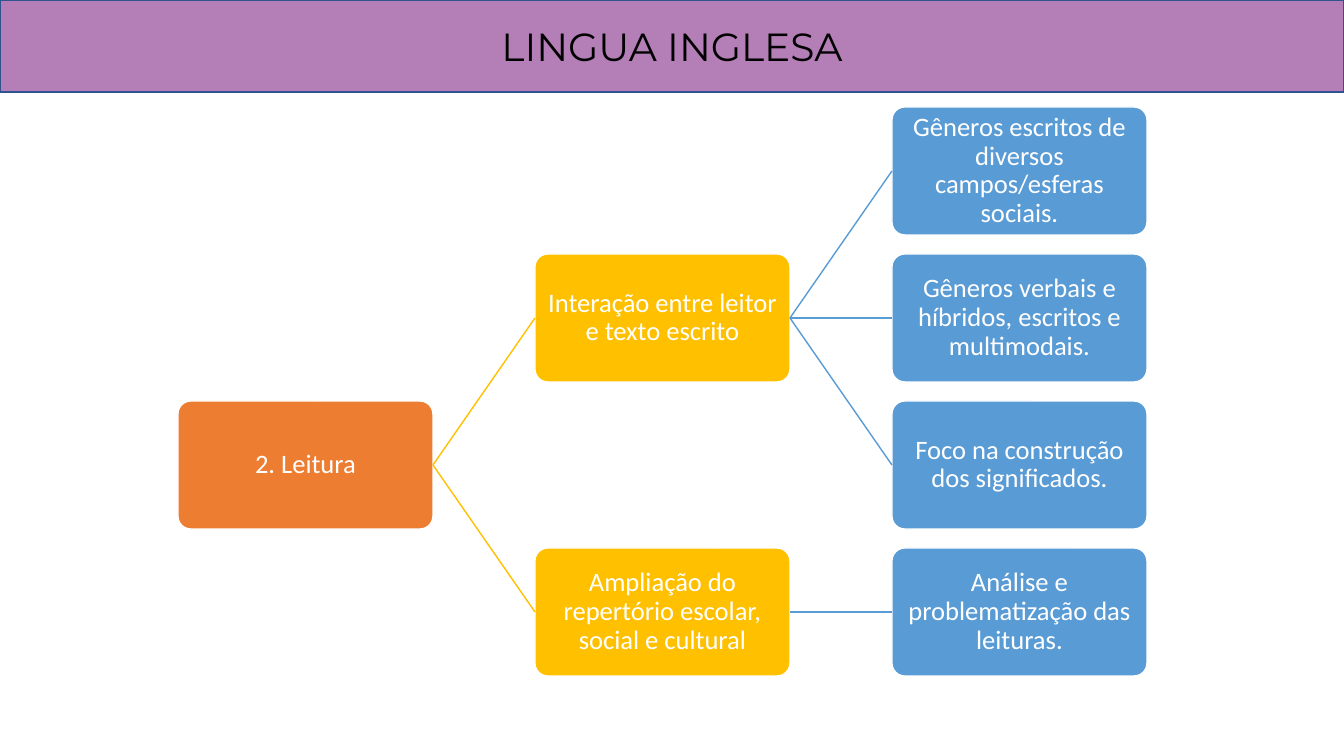
from lxml import etree
from pptx import Presentation
from pptx.dml.color import RGBColor
from pptx.enum.shapes import MSO_CONNECTOR, MSO_SHAPE
from pptx.enum.text import MSO_ANCHOR, MSO_AUTO_SIZE, PP_ALIGN
from pptx.oxml.ns import qn
from pptx.util import Emu, Pt

ROUNDED = MSO_SHAPE.ROUNDED_RECTANGLE
STRAIGHT = MSO_CONNECTOR.STRAIGHT
MIDDLE = MSO_ANCHOR.MIDDLE
CENTER = PP_ALIGN.CENTER
NO_AUTOFIT = MSO_AUTO_SIZE.NONE
LEFT_SIDE, RIGHT_SIDE = 1, 3

SLIDE_WIDTH, SLIDE_HEIGHT = 1344, 756
BANNER_HEIGHT = 92
BOX_WIDTH, BOX_HEIGHT = 255, 128
FIRST_LEFT, COLUMN_STEP = 178, 357
FIRST_TOP, ROW_STEP = 107, 147

# One colour per level of the tree
LEVEL_COLORS = ["ED7D31", "FFC000", "599BD5"]

# Each node: text, row, children
TREE = ("2. Leitura", 2, [
    ("Interação entre leitor e texto escrito", 1, [
        ("Gêneros escritos de diversos campos/esferas sociais.", 0, []),
        ("Gêneros verbais e híbridos, escritos e multimodais.", 1, []),
        ("Foco na construção dos significados.", 2, []),
    ]),
    ("Ampliação do repertório escolar, social e cultural", 3, [
        ("Análise e problematização das leituras.", 3, []),
    ]),
])


def px(length):
    return Emu(round(length * 12192000 / SLIDE_WIDTH))


def color(value):
    return RGBColor.from_string(value)


def apply(target, values):
    for name, value in values.items():
        setattr(target, name, value)


class TreeSlide:
    """Holds the style and the current slide."""

    title_font = {"name": "Montserrat", "size": Pt(28)}
    node_font = {"name": "Calibri", "size": Pt(19)}

    def __init__(self, deck):
        self.slide = deck.slides.add_slide(deck.slide_layouts[5])

    def paint(self, shape, fill, line):
        shape.fill.solid()
        shape.fill.fore_color.rgb = color(fill)
        shape.line.color.rgb = color(line)
        shape.line.width = Pt(1)

    def label(self, shape, text, font, text_color, spacing, inset_x, inset_y):
        frame = shape.text_frame
        apply(frame, {
            "word_wrap": True, "auto_size": NO_AUTOFIT,
            "vertical_anchor": MIDDLE,
            "margin_left": px(inset_x), "margin_right": px(inset_x),
            "margin_top": px(inset_y), "margin_bottom": px(inset_y),
        })
        para = frame.paragraphs[0]
        apply(para, {"alignment": CENTER, "line_spacing": spacing})
        span = para.add_run()
        span.text = text
        apply(span.font, font)
        span.font.color.rgb = color(text_color)

    def banner(self, text):
        title = self.slide.shapes.title
        apply(title, {"left": px(0), "top": px(0),
                      "width": px(SLIDE_WIDTH), "height": px(BANNER_HEIGHT)})
        self.paint(title, "B47EB6", "31538F")
        self.label(title, text, self.title_font, "000000", 1.0, 10, 5)

    def node(self, text, level, row):
        box = self.slide.shapes.add_shape(
            ROUNDED,
            px(FIRST_LEFT + level * COLUMN_STEP),
            px(FIRST_TOP + row * ROW_STEP),
            px(BOX_WIDTH), px(BOX_HEIGHT))
        box.adjustments[0] = 0.1
        box.shadow.inherit = False
        self.paint(box, LEVEL_COLORS[level], "FFFFFF")
        self.label(box, text, self.node_font, "FFFFFF", 0.9, 1, 1)
        return box

    def branch(self, parent, child, line_color):
        link = self.slide.shapes.add_connector(STRAIGHT, 0, 0, 0, 0)
        link.begin_connect(parent, RIGHT_SIDE)
        link.end_connect(child, LEFT_SIDE)
        link.line.color.rgb = color(line_color)
        link.line.width = Pt(1)
        etree.SubElement(link._element.spPr, qn("a:effectLst"))

    def tree(self, node, level=0):
        text, row, children = node
        box = self.node(text, level, row)
        for child in children:
            child_box = self.tree(child, level + 1)
            self.branch(box, child_box, LEVEL_COLORS[level + 1])
        return box


def main():
    deck = Presentation()
    deck.slide_width, deck.slide_height = px(SLIDE_WIDTH), px(SLIDE_HEIGHT)
    page = TreeSlide(deck)
    page.banner("LINGUA INGLESA")
    page.tree(TREE)
    deck.save("out.pptx")


if __name__ == "__main__":
    main()
